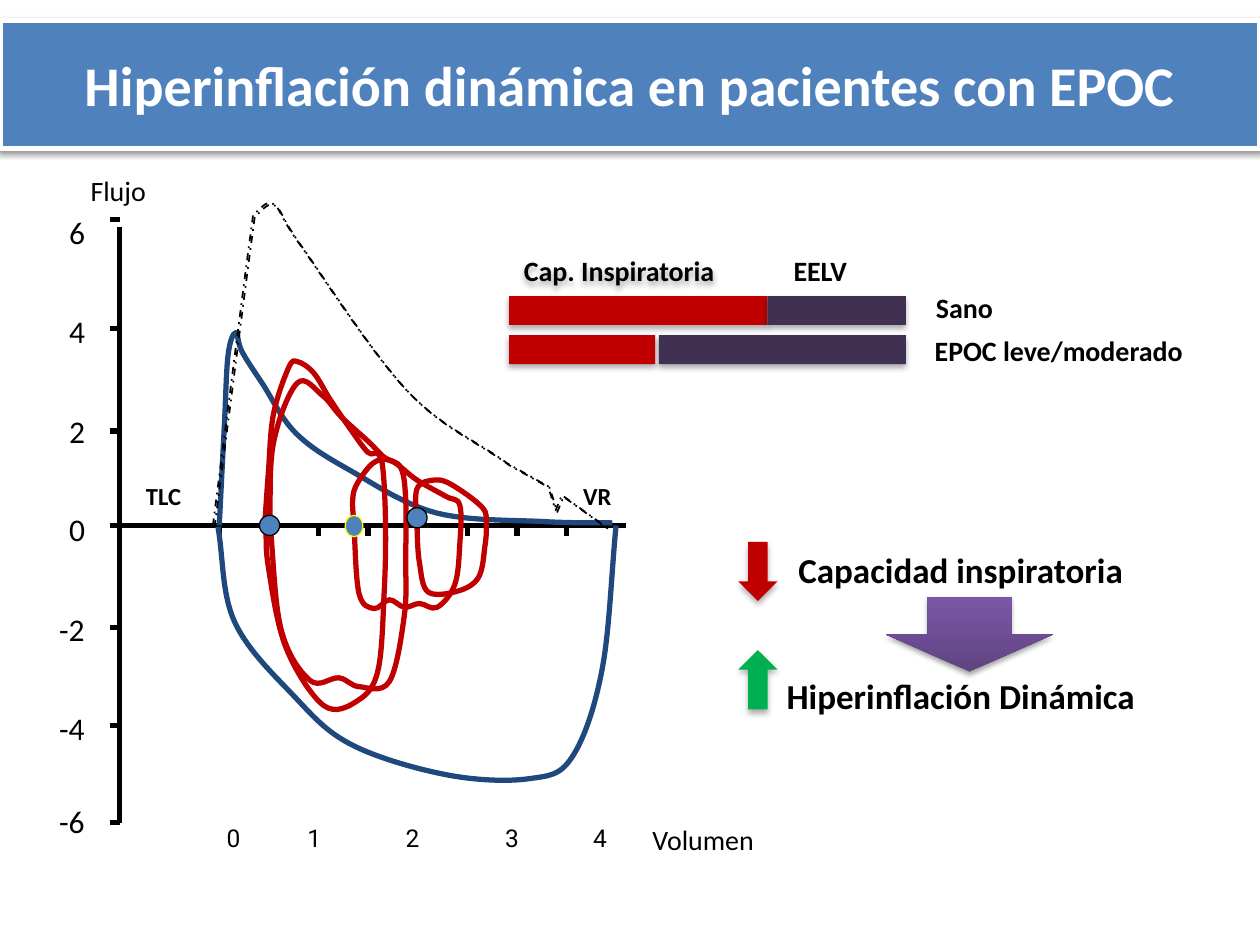
from lxml import etree
from pptx import Presentation
from pptx.dml.color import RGBColor
from pptx.enum import dml, shapes, text
from pptx.oxml import ns
from pptx import util as u

BLACK, WHITE, RED, NAVY = "000000", "FFFFFF", "C00000", "1F497D"
BLUE, PURPLE, GREEN, YELLOW = "4F81BD", "403152", "00B050", "FFFF00"
SOFT = (32, 3.5, 2.2, 90)
MSO = shapes.MSO_SHAPE
ZERO_Y, AXIS_X, TICK = 4.17, 0.95, 0.08
BAR_LEFT, BAR_RIGHT, BAR_HEIGHT = 4.04, 7.19, 0.23

EXPIRATION = [(1.74, 4.17), (1.78, 3.39), (1.81, 2.82), (1.87, 2.64), (1.92, 2.79),
              (2.08, 3.04), (2.35, 3.44), (2.79, 3.74), (3.46, 4.07), (4.32, 4.14),
              (4.86, 4.15)]
INSPIRATION = [(4.89, 4.17), (4.78, 5.31), (4.54, 6.01), (4.2, 6.18), (3.55, 6.15),
               (2.79, 5.91), (2.33, 5.52), (1.86, 4.93), (1.73, 4.18)]
REST_LOOP = [(3.31, 4.17), (3.31, 3.88), (3.45, 3.81), (3.59, 3.85), (3.83, 4.03),
             (3.86, 4.17), (3.85, 4.33), (3.8, 4.58), (3.64, 4.69), (3.4, 4.7),
             (3.33, 4.47)]
EFFORT_LOOP = [(2.81, 4.17), (2.8, 3.96), (2.84, 3.83), (2.97, 3.67), (3.11, 3.66),
               (3.31, 3.81), (3.54, 3.94), (3.65, 4.01), (3.65, 4.32), (3.61, 4.64),
               (3.47, 4.82), (3.33, 4.79), (3.21, 4.82), (3.09, 4.76), (2.97, 4.83),
               (2.85, 4.71)]
LARGE_LOOP = [(2.14, 4.19), (2.17, 3.52), (2.36, 3.04), (2.56, 3.14), (2.71, 3.31),
              (2.93, 3.51), (3.05, 3.63), (3.18, 3.71), (3.22, 3.96), (3.22, 4.43),
              (3.21, 4.88), (3.09, 5.41), (2.85, 5.45), (2.69, 5.38), (2.46, 5.4),
              (2.23, 4.99), (2.14, 4.12)]
PEAK_LOOP = [(2.1, 4.18), (2.13, 3.75), (2.17, 3.29), (2.29, 2.92), (2.36, 2.87),
             (2.49, 2.96), (2.62, 3.17), (2.77, 3.39), (2.92, 3.59), (3, 3.6),
             (3.04, 3.73), (3.06, 4.17), (3.05, 4.68), (3, 5.32), (2.84, 5.56),
             (2.57, 5.6), (2.27, 5.14), (2.13, 4.5), (2.11, 4.15)]
HEALTHY_RISE = [(1.69, 4.17), (1.95, 2.15)]
HEALTHY_FALL = [(2.01, 1.7), (2.17, 1.62), (2.38, 1.94), (3.23, 3.1), (4.03, 3.68)]
HEALTHY_TAIL = [(4.35, 3.86), (4.41, 4.05), (4.46, 3.93), (4.82, 4.19)]


def rgb(value):
    return RGBColor.from_string(value)


def set_line(line, color, width):
    line.color.rgb = rgb(color)
    line.width = u.Pt(width)


def set_shadow(sp, alpha, blur, dist, angle):
    sp.shadow.inherit = False
    effects = sp.element.spPr.find(ns.qn("a:effectLst"))
    outer = etree.SubElement(effects, ns.qn("a:outerShdw"), blurRad=str(u.Pt(blur)),
                             dist=str(u.Pt(dist)), dir=str(angle * 60000),
                             rotWithShape="0")
    color = etree.SubElement(outer, ns.qn("a:srgbClr"), val=BLACK)
    etree.SubElement(color, ns.qn("a:alpha"), val=str(alpha * 1000))


def set_font(p, name, size, bold, color):
    p.font.name, p.font.size, p.font.bold = name, u.Pt(size), bold
    p.font.color.rgb = rgb(color)


def add_line(s, x1, y1, x2, y2):
    cn = s.shapes.add_connector(shapes.MSO_CONNECTOR.STRAIGHT,
                                *map(u.Inches, (x1, y1, x2, y2)))
    set_line(cn.line, BLACK, 3)
    etree.SubElement(cn.element.spPr, ns.qn("a:effectLst"))


def shift(point, start, end, share):
    return tuple(p + (b - a) * share for p, a, b in zip(point, start, end))


def smooth(knots, closed=False):
    if closed:
        chain = [knots[-1], *knots, knots[0], knots[1]]
    else:
        before = shift(knots[0], knots[1], knots[0], 1)
        after = shift(knots[-1], knots[-2], knots[-1], 1)
        chain = [before, *knots, after]
    return [(shift(b, a, c, 1 / 6), shift(c, b, d, -1 / 6), c)
            for a, b, c, d in zip(chain, chain[1:], chain[2:], chain[3:])]


def straight(points):
    return [(point,) for point in points]


def add_path(s, start, segments, color, width=3, closed=False):
    builder = s.shapes.build_freeform(*map(u.Inches, start), scale=1.0)
    points = [tuple(map(u.Inches, point)) for seg in segments for point in seg]
    builder.add_line_segments(points, close=closed)
    sp = builder.convert_to_shape()
    steps = iter(list(sp.element.iter(ns.qn("a:lnTo"))))
    for seg in segments:
        group = [next(steps) for _ in seg]
        if len(group) == 3:
            bezier = etree.Element(ns.qn("a:cubicBezTo"))
            group[0].addprevious(bezier)
            for step in group:
                bezier.append(step[0])
                step.getparent().remove(step)
    sp.fill.background()
    sp.shadow.inherit = False
    set_line(sp.line, color, width)
    return sp


def add_curve(s, knots, color, closed=False):
    add_path(s, knots[0], smooth(knots, closed), color, closed=closed)


def add_shape(s, kind, box, fill, line=None, shadow=None):
    sp = s.shapes.add_shape(kind, *map(u.Inches, box))
    sp.shadow.inherit = False
    sp.fill.solid()
    sp.fill.fore_color.rgb = rgb(fill)
    if line:
        set_line(sp.line, line, 0.75)
    else:
        sp.line.fill.background()
    if shadow:
        set_shadow(sp, *shadow)
    return sp


def add_label(s, words, box, size, bold=False, font="Calibri"):
    sp = s.shapes.add_textbox(*map(u.Inches, box))
    tf = sp.text_frame
    tf.word_wrap = False
    tf.auto_size = text.MSO_AUTO_SIZE.SHAPE_TO_FIT_TEXT
    tf.text = words
    for p in tf.paragraphs:
        set_font(p, font, size, bold, BLACK)
    return sp


def add_title(s, words):
    sp = s.shapes.title
    sp.left, sp.top, sp.width, sp.height = map(u.Inches, (0, 0.16, 10, 1.02))
    sp.fill.solid()
    sp.fill.fore_color.rgb = rgb(BLUE)
    set_line(sp.line, WHITE, 3)
    set_shadow(sp, 38, 3.1, 1.6, 90)
    tf = sp.text_frame
    tf.text = words
    tf.auto_size = text.MSO_AUTO_SIZE.NONE
    tf.vertical_anchor = text.MSO_ANCHOR.MIDDLE
    p = tf.paragraphs[0]
    p.alignment = text.PP_ALIGN.CENTER
    set_font(p, "Calibri", 32, True, WHITE)


def add_axes(s):
    add_line(s, AXIS_X, 1.8, AXIS_X, 6.53)
    add_line(s, AXIS_X, ZERO_Y, 4.97, ZERO_Y)
    for y in (1.74, 2.61, 3.42, ZERO_Y, 4.98, 5.76, 6.53):
        add_line(s, AXIS_X - TICK, y, AXIS_X, y)
    for i in range(8):
        x = 1.74 + 0.394 * i
        add_line(s, x, ZERO_Y, x, ZERO_Y + TICK)
    for flow, y in zip(range(6, -7, -2), (1.64, 2.43, 3.22, 4, 4.79, 5.58, 6.32)):
        width = 0.42 if flow < 0 else 0.34
        add_label(s, str(flow), (0.79 - width, y, width, 0.4), 18)
    for volume, x in enumerate((1.7, 2.34, 3.12, 3.91, 4.61)):
        add_label(s, str(volume), (x, 6.48, 0.31, 0.34), 14, font="Roboto")
    add_label(s, "Volumen", (5.08, 6.48, 1.07, 0.37), 16)
    add_label(s, "Flujo", (0.62, 1.33, 0.65, 0.37), 16)


def add_loops(s):
    for knots in (EXPIRATION, INSPIRATION):
        add_curve(s, knots, NAVY)
    for knots in (REST_LOOP, EFFORT_LOOP):
        add_curve(s, knots, RED, closed=True)
    for knots in (LARGE_LOOP, PEAK_LOOP):
        add_curve(s, knots, RED)
    segments = (straight(HEALTHY_RISE[1:] + HEALTHY_FALL[:1])
                + smooth(HEALTHY_FALL) + straight(HEALTHY_TAIL))
    healthy = add_path(s, HEALTHY_RISE[0], segments, BLACK, 1)
    healthy.line.dash_style = dml.MSO_LINE.DASH_DOT
    set_shadow(healthy, 100, 0, 1.4, 45)


def add_volume_marks(s):
    for x, y, w, h, line in ((3.23, 4.03, 0.16, 0.16, BLACK),
                             (2.74, 4.09, 0.14, 0.17, YELLOW),
                             (2.06, 4.09, 0.16, 0.16, BLACK)):
        add_shape(s, MSO.OVAL, (x, y, w, h), BLUE, line)
    add_label(s, "TLC", (1.06, 3.77, 0.58, 0.34), 14, True)
    add_label(s, "VR", (4.53, 3.77, 0.48, 0.34), 14, True)


def add_capacity_bars(s):
    for y, split, gap in ((2.35, 6.09, 0), (2.66, 5.2, 0.03)):
        for left, right, fill in ((BAR_LEFT, split, RED), (split + gap, BAR_RIGHT, PURPLE)):
            add_shape(s, MSO.RECTANGLE, (left, y, right - left, BAR_HEIGHT), fill,
                      shadow=SOFT)
    heading = add_label(s, "Cap. Inspiratoria", (4.06, 1.96, 1.96, 0.37), 16, True)
    heading.text_frame.word_wrap = True
    set_shadow(heading, *SOFT)
    for words, x, y, width in (("EELV", 6.2, 1.96, 0.63), ("Sano", 7.33, 2.26, 0.66),
                               ("EPOC leve/moderado", 7.32, 2.6, 2.2)):
        add_label(s, words, (x, y, width, 0.37), 16, True)


def add_conclusion(s):
    sp = add_label(s, "Capacidad inspiratoria\nHiperinflación Dinámica",
                   (6.13, 4.3, 2.99, 1.45), 20, True)
    for p in sp.text_frame.paragraphs:
        p.alignment = text.PP_ALIGN.CENTER
    p.space_before = u.Pt(48)
    arrow = add_shape(s, MSO.DOWN_ARROW, (7.03, 4.74, 1.33, 0.59), PURPLE,
                      shadow=(35, 3.1, 1.8, 90))
    arrow.fill.gradient()
    arrow.fill.gradient_angle = 90
    for stop, color in zip(arrow.fill.gradient_stops, ("5F4480", "7C57A8")):
        stop.color.rgb = rgb(color)
    for kind, y, fill in ((MSO.DOWN_ARROW, 4.3, RED), (MSO.UP_ARROW, 5.16, GREEN)):
        add_shape(s, kind, (5.86, y, 0.31, 0.47), fill, shadow=SOFT)


def main():
    prs = Presentation()
    prs.slide_width, prs.slide_height = u.Inches(10), u.Inches(7.5)
    s = prs.slides.add_slide(prs.slide_layouts[5])
    add_title(s, "Hiperinflación dinámica en pacientes con EPOC")
    add_axes(s)
    add_loops(s)
    add_volume_marks(s)
    add_capacity_bars(s)
    add_conclusion(s)
    prs.save("out.pptx")


if __name__ == "__main__":
    main()
